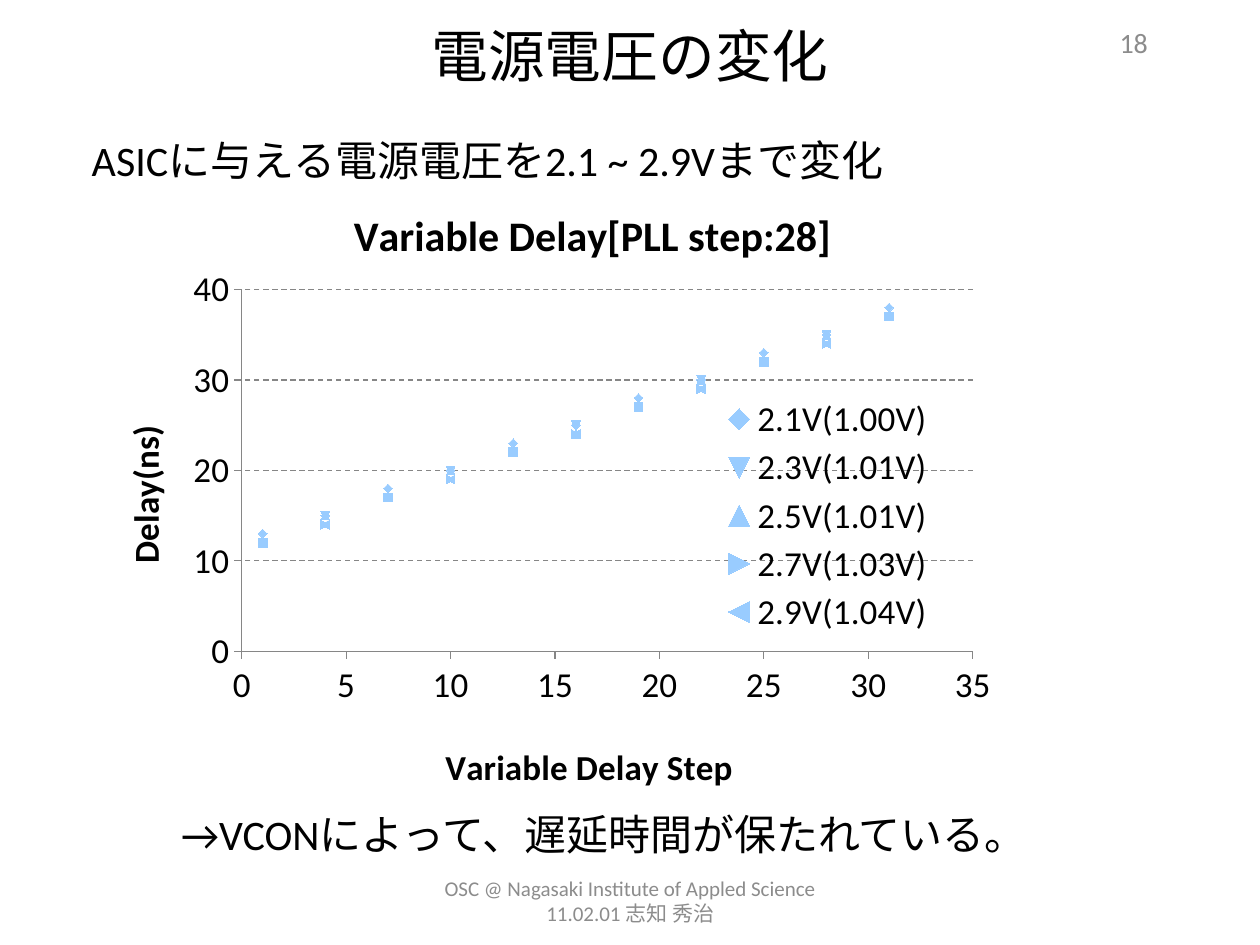
import pptx
import pptx.chart.data
import pptx.dml.color
import pptx.enum.chart
import pptx.enum.dml
import pptx.enum.text
import pptx.oxml
import pptx.util
from pptx.util import Cm

ALIGN = pptx.enum.text.PP_ALIGN
ANCHOR = pptx.enum.text.MSO_ANCHOR
CHART = pptx.enum.chart
BLACK, GRAY, LINE, MARKER = "000000", "8C8C8C", "868686", "99CCFF"


def rgb(value):
    return pptx.dml.color.RGBColor.from_string(value)


def set_layout(parent, following, **values):
    """Give a chart part a manual layout, in fractions of the chart, before the child `following`."""
    modes = '<c:layoutTarget val="inner"/>' if parent.tag.endswith("plotArea") else ""
    modes += '<c:xMode val="edge"/><c:yMode val="edge"/>'
    sizes = "".join(f'<c:{name} val="{value}"/>' for name, value in values.items())
    layout = pptx.oxml.parse_xml(
        '<c:layout xmlns:c="http://schemas.openxmlformats.org/drawingml/2006/chart">'
        f"<c:manualLayout>{modes}{sizes}</c:manualLayout></c:layout>")
    for old in parent.xpath("c:layout"):
        parent.remove(old)
    later = parent.xpath(following)
    if later:
        later[0].addprevious(layout)
    else:
        parent.append(layout)


presentation = pptx.Presentation()
presentation.slide_width, presentation.slide_height = Cm(25.4), Cm(19.05)
slide = presentation.slides.add_slide(presentation.slide_layouts[5])

# Texts: wording, position, size, colour, alignment, anchor
texts = [
    ("電源電圧の変化", (1.27, 0.43, 22.86, 1.35), 32.4, BLACK, ALIGN.CENTER, ANCHOR.MIDDLE),
    ("OSC @ Nagasaki Institute of Appled Science 11.02.01 志知 秀治",
     (8.68, 17.65, 8.05, 1.02), 12, GRAY, ALIGN.CENTER, ANCHOR.MIDDLE),
    ("18", (21.97, 0.13, 1.42, 1.45), 16, GRAY, ALIGN.RIGHT, ANCHOR.MIDDLE),
    ("→VCONによって、遅延時間が保たれている。",
     (3.4, 16.18, 18.57, 1.27), 24, BLACK, ALIGN.LEFT, ANCHOR.TOP),
    ("ASICに与える電源電圧を2.1 ~ 2.9Vまで変化",
     (1.6, 2.59, 18.57, 1.27), 24, BLACK, ALIGN.LEFT, ANCHOR.TOP),
]
for index, (wording, position, size, color, alignment, anchor) in enumerate(texts):
    shape = slide.shapes.title if index == 0 else slide.shapes.add_textbox(0, 0, 0, 0)
    shape.left, shape.top, shape.width, shape.height = map(Cm, position)
    frame = shape.text_frame
    frame.text = wording
    frame_format = {"word_wrap": True, "vertical_anchor": anchor,
                    "auto_size": pptx.enum.text.MSO_AUTO_SIZE.NONE}
    for name, value in frame_format.items():
        setattr(frame, name, value)
    paragraph = frame.paragraphs[0]
    paragraph.alignment = alignment
    font = paragraph.runs[0].font
    for name, value in {"size": pptx.util.Pt(size), "name": "Calibri"}.items():
        setattr(font, name, value)
    font.color.rgb = rgb(color)

# Scatter chart of delay against step
steps = range(1, 32, 3)
delays = {
    "2.1V(1.00V)": [13, 15, 18, 20, 23, 25, 28, 30, 33, 35, 38],
    "2.3V(1.01V)": [12, 15, 17, 20, 22, 25, 27, 30, 32, 35, 37],
    "2.5V(1.01V)": [12, 15, 17, 20, 22, 24, 27, 30, 32, 35, 37],
    "2.7V(1.03V)": [12, 14, 17, 19, 22, 24, 27, 29, 32, 34, 37],
    "2.9V(1.04V)": [12, 14, 17, 19, 22, 24, 27, 29, 32, 34, 37],
}
chart_data = pptx.chart.data.XyChartData()
for voltage, values in delays.items():
    series_data = chart_data.add_series(voltage)
    for step, delay in zip(steps, values):
        series_data.add_data_point(step, delay)
chart = slide.shapes.add_chart(
    CHART.XL_CHART_TYPE.XY_SCATTER, Cm(1.6), Cm(3.23), Cm(23.39), Cm(13.03), chart_data).chart
for name, value in {"name": "Calibri", "size": pptx.util.Pt(20)}.items():
    setattr(chart.font, name, value)
chart.font.color.rgb = rgb(BLACK)
chart.plots[0].vary_by_categories = False
for series in chart.plots[0].series:
    series.smooth = False
    series.format.line.fill.background()
    series.marker.size = 5
    series.marker.format.fill.solid()
    series.marker.format.fill.fore_color.rgb = rgb(MARKER)
    series.marker.format.line.fill.background()

for axis, maximum, unit in [(chart.category_axis, 35, 5), (chart.value_axis, 40, 10)]:
    axis_format = {"minimum_scale": 0, "maximum_scale": maximum, "major_unit": unit,
                   "major_tick_mark": CHART.XL_TICK_MARK.OUTSIDE,
                   "minor_tick_mark": CHART.XL_TICK_MARK.NONE}
    for name, value in axis_format.items():
        setattr(axis, name, value)
    axis.format.line.color.rgb = rgb(LINE)
    axis.format.line.width = pptx.util.Pt(0.75)
chart.category_axis.has_major_gridlines = False
chart.value_axis.has_major_gridlines = True
gridline = chart.value_axis.major_gridlines.format.line
gridline.color.rgb = rgb(LINE)
gridline.width = pptx.util.Pt(0.75)
gridline.dash_style = pptx.enum.dml.MSO_LINE.DASH

titles = [
    (chart.chart_title, "Variable Delay[PLL step:28]", 24, 0.23, 0.06),
    (chart.category_axis.axis_title, "Variable Delay Step", 20, 0.31, 0.89),
    (chart.value_axis.axis_title, "Delay(ns)", 20, 0.03, 0.4),
]
for title, wording, size, x, y in titles:
    title.text_frame.text = wording
    font = title.text_frame.paragraphs[0].runs[0].font
    title_format = {"name": "Calibri", "size": pptx.util.Pt(size), "bold": True}
    for name, value in title_format.items():
        setattr(font, name, value)
    font.color.rgb = rgb(BLACK)
    set_layout(title.text_frame._txBody.getparent().getparent(), "c:overlay", x=x, y=y)

chart.has_legend = True
chart.legend.position = CHART.XL_LEGEND_POSITION.RIGHT
chart.legend.include_in_layout = False
set_layout(chart.legend._element, "c:overlay", x=0.55, y=0.36, w=0.19, h=0.38)
plot_area = chart.plots[0]._element.getparent()
set_layout(plot_area, "c:scatterChart", x=0.14, y=0.2, w=0.63, h=0.56)

presentation.save("out.pptx")
